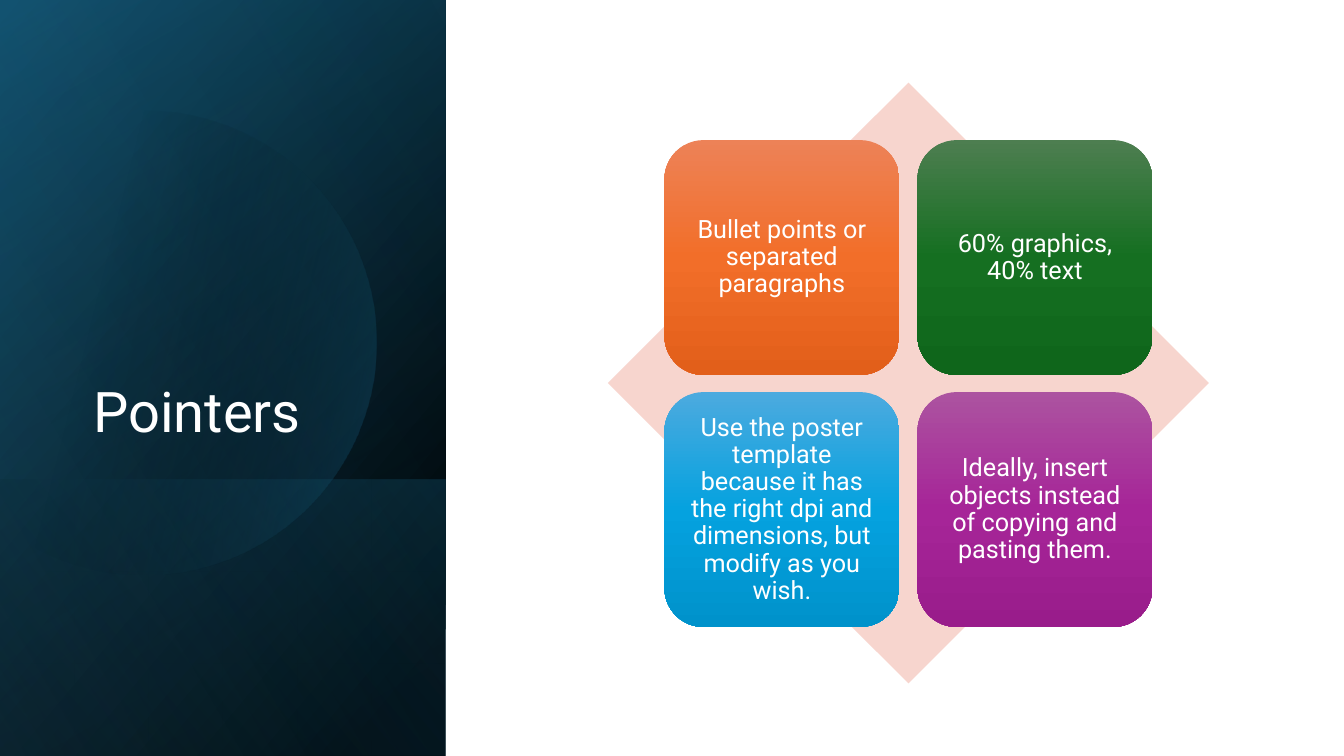
"""Build the Pointers slide: a dark title panel beside four cards on a diamond."""
from math import acos, cos, sin

from lxml import etree
from pptx import Presentation
from pptx.dml.color import RGBColor
from pptx.enum import shapes, text
from pptx.oxml import ns
from pptx.util import Inches, Pt

KIND = shapes.MSO_SHAPE
CARDS = [
    ("Bullet points or separated paragraphs", ("ED8257", "F26E29", "E25F1A")),
    ("60% graphics, 40% text", ("4D7E50", "156F21", "0F661B")),
    ("Use the poster template because it has the right dpi and dimensions, "
     "but modify as you wish.", ("4CAADF", "05A2DF", "0092CB")),
    ("Ideally, insert objects instead of copying and pasting them.",
     ("AC53A0", "A62598", "991C8B")),
]
SHEETS = [
    (-1.54, 1.54, 7.5, 50, [(8, "000000", 100), (100, "104862", 100)]),
    (-1.54, 1.54, 7.5, 30, [(0, "000000", 0), (99, "156082", 46)]),
    (0.84, 3.92, 2.74, 130, [(2, "156082", 29), (100, "000000", 30)]),
]
SHEEN = (-1.54, 1.54, 7.5, 120, [(0, "000000", 0), (99, "46B1E1", 11)])


def color(code):
    """Turn a hex string into a colour."""
    return RGBColor.from_string(code)


def plain(shape):
    """Remove the shadow and the outline."""
    shape.shadow.inherit = False
    shape.line.fill.background()
    return shape


def blend(shape, angle, stops):
    """Fill a shape with a linear gradient of (place, colour, opacity) stops."""
    shape.fill.gradient()
    grad = shape._element.spPr.find(ns.qn("a:gradFill"))
    grad.find(ns.qn("a:lin")).set("ang", str(angle * 60000))
    group = grad.find(ns.qn("a:gsLst"))
    for old in list(group):
        group.remove(old)
    for place, code, alpha in stops:
        stop = etree.SubElement(group, ns.qn("a:gs"), pos=str(place * 1000))
        tint = etree.SubElement(stop, ns.qn("a:srgbClr"), val=code)
        if alpha < 100:
            etree.SubElement(tint, ns.qn("a:alpha"), val=str(alpha * 1000))


def add_sheet(slide, left, top, width, angle, stops):
    """Add one turned and mirrored gradient layer of the title panel."""
    sheet = plain(slide.shapes.add_shape(
        KIND.RECTANGLE, Inches(left), Inches(top), Inches(width), Inches(4.42)))
    sheet.rotation = 90
    sheet._element.spPr.xfrm.set("flipH", "1")
    blend(sheet, angle, stops)


def add_disc(slide, x, y, radius):
    """Add a translucent disc cut off by the left slide edge."""
    limit = acos(-x / radius)
    turns = [limit * (step / 60 - 1) for step in range(121)]
    points = [(Inches(x + radius * cos(t)), Inches(y + radius * sin(t)))
              for t in turns]
    form = slide.shapes.build_freeform(*points[0])
    form.add_line_segments(points[1:])
    disc = plain(form.convert_to_shape())
    blend(disc, 14, [(29, "000000", 0), (100, "156082", 43)])


def write(frame, words, size, align, anchor):
    """Put one white paragraph into a text frame."""
    frame.word_wrap = True
    frame.vertical_anchor = anchor
    para = frame.paragraphs[0]
    para.text = words
    para.alignment = align
    para.line_spacing = 0.9
    para.font.name = "Roboto"
    para.font.size = Pt(size)
    para.font.color.rgb = color("FFFFFF")


def add_title(slide, words):
    """Add the slide title to the panel."""
    box = slide.shapes.add_textbox(
        Inches(0.64), Inches(1.84), Inches(2.44), Inches(2.62))
    write(box.text_frame, words, 40, text.PP_ALIGN.RIGHT, text.MSO_ANCHOR.BOTTOM)


def add_card(slide, left, top, words, codes):
    """Add a rounded card with centred text."""
    card = plain(slide.shapes.add_shape(
        KIND.ROUNDED_RECTANGLE, Inches(left), Inches(top),
        Inches(2.33), Inches(2.33)))
    blend(card, 90, [(i * 50, code, 100) for i, code in enumerate(codes)])
    frame = card.text_frame
    frame.margin_left = frame.margin_right = Inches(0.07)
    frame.margin_top = frame.margin_bottom = Inches(0.07)
    write(frame, words, 18, text.PP_ALIGN.CENTER, text.MSO_ANCHOR.MIDDLE)


def main():
    """Build and save the slide."""
    deck = Presentation()
    deck.slide_width, deck.slide_height = Inches(13.33), Inches(7.5)
    slide = deck.slides.add_slide(deck.slide_layouts[6])
    for sheet in SHEETS:
        add_sheet(slide, *sheet)
    add_disc(slide, 1.43, 3.4, 2.3)
    add_sheet(slide, *SHEEN)
    add_title(slide, "Pointers")
    gem = plain(slide.shapes.add_shape(
        KIND.DIAMOND, Inches(6.03), Inches(0.82), Inches(5.96), Inches(5.96)))
    gem.fill.solid()
    gem.fill.fore_color.rgb = color("F7D5CE")
    for i, (words, codes) in enumerate(CARDS):
        row, col = divmod(i, 2)
        add_card(slide, 6.59 + 2.51 * col, 1.39 + 2.5 * row, words, codes)
    deck.save("out.pptx")


if __name__ == "__main__":
    main()
